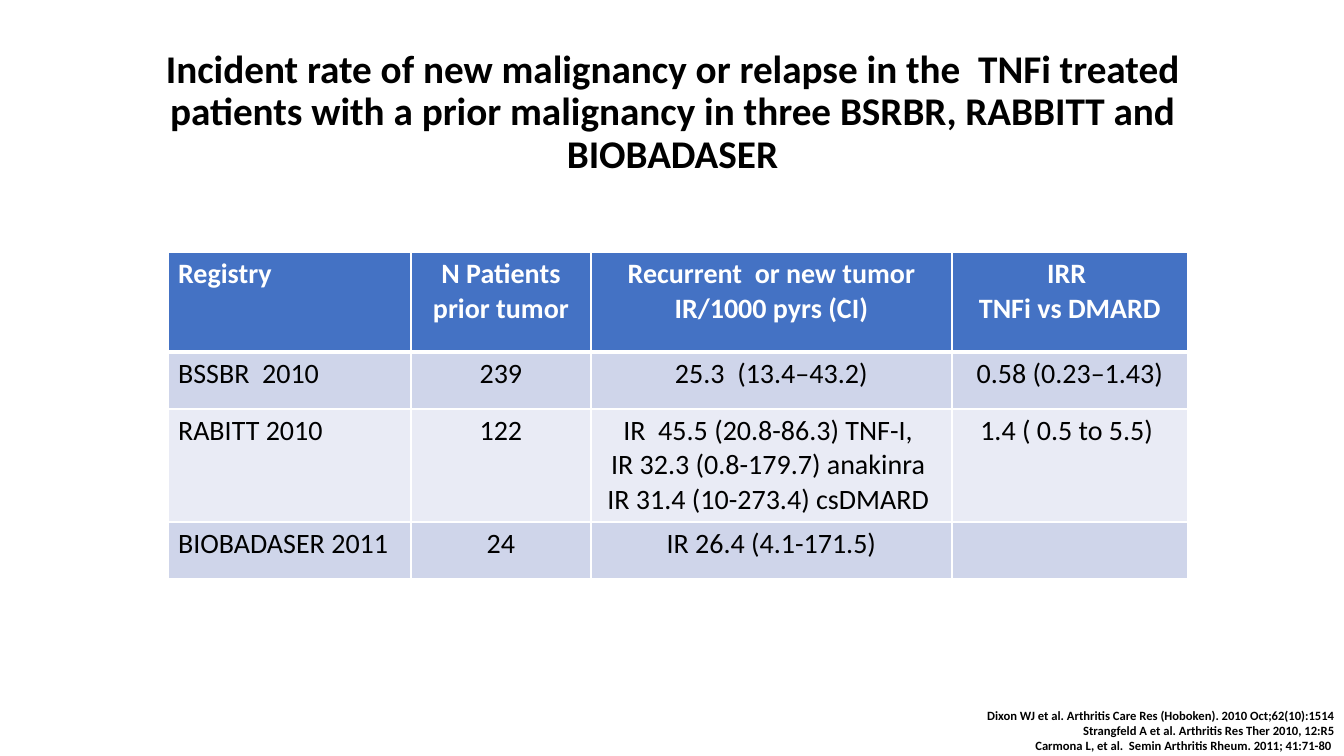
from lxml import etree
from pptx import Presentation
from pptx.dml.color import RGBColor
from pptx.enum.text import MSO_ANCHOR, MSO_AUTO_SIZE, PP_ALIGN
from pptx.oxml.ns import qn
from pptx.util import Emu, Pt

HEADLINE = ("Incident rate of new malignancy or relapse in the  TNFi treated patients "
            "with a prior malignancy in three BSRBR, RABBITT and BIOBADASER")
REGISTRY_ROWS = [
    ["Registry", "N Patients prior tumor",
     "Recurrent  or new tumor\nIR/1000 pyrs (CI)", "IRR \nTNFi vs DMARD"],
    ["BSSBR  2010", "239", "25.3  (13.4–43.2)", "0.58 (0.23–1.43)"],
    ["RABITT 2010", "122",
     "IR  45.5 (20.8-86.3) TNF-I, \nIR 32.3 (0.8-179.7) anakinra \nIR 31.4 (10-273.4) csDMARD ",
     "1.4 ( 0.5 to 5.5) "],
    ["BIOBADASER 2011", "24", "IR 26.4 (4.1-171.5)", ""],
]
REFERENCES = [
    "Dixon WJ et al. Arthritis Care Res (Hoboken). 2010 Oct;62(10):1514",
    "Strangfeld A et al. Arthritis Res Ther 2010, 12:R5",
    "Carmona L, et al.  Semin Arthritis Rheum. 2011; 41:71-80 ",
]

BLACK = RGBColor(0x00, 0x00, 0x00)
WHITE = RGBColor(0xFF, 0xFF, 0xFF)
HEADER_BLUE = RGBColor(0x44, 0x72, 0xC4)
BANDS = [RGBColor(0xE9, 0xEB, 0xF5), RGBColor(0xCF, 0xD5, 0xEA)]

HEADLINE_BOX = (93, 40, 1159, 146)
REFERENCES_BOX = (502, 703, 842, 56)
TABLE_CORNER = (168, 252)
COLUMN_WIDTHS = [243, 180, 361, 236]
ROW_HEIGHTS = [100, 57, 106, 57]

HEADLINE_FONT = {"name": "Calibri", "size": Pt(28), "bold": True}
HEADER_FONT = {"name": "Calibri", "size": Pt(20), "bold": True}
BODY_FONT = {"name": "Calibri", "size": Pt(20), "bold": False}
REFERENCE_FONT = {"name": "Calibri", "size": Pt(9), "bold": True}


def px(length):
    return Emu(round(length * 914400 / 100.8))


def write(frame, text, font_values, color, align):
    frame.text = text
    for paragraph in frame.paragraphs:
        paragraph.alignment = align
        for font in [paragraph.font] + [run.font for run in paragraph.runs]:
            for key, value in font_values.items():
                setattr(font, key, value)
            font.color.rgb = color


def add_border(cell, side, points):
    line = etree.SubElement(cell._tc.get_or_add_tcPr(), qn(f"a:ln{side}"), w=str(Pt(points)))
    fill = etree.SubElement(line, qn("a:solidFill"))
    etree.SubElement(fill, qn("a:srgbClr"), val=str(WHITE))


def build_headline(slide):
    headline = slide.shapes.title
    headline.left, headline.top, headline.width, headline.height = map(px, HEADLINE_BOX)
    frame = headline.text_frame
    write(frame, HEADLINE, HEADLINE_FONT, BLACK, PP_ALIGN.CENTER)
    frame.vertical_anchor = MSO_ANCHOR.MIDDLE
    frame.auto_size = MSO_AUTO_SIZE.NONE
    frame.paragraphs[0].line_spacing = 0.9


def build_registry_table(slide):
    place = map(px, (*TABLE_CORNER, sum(COLUMN_WIDTHS), sum(ROW_HEIGHTS)))
    table = slide.shapes.add_table(len(ROW_HEIGHTS), len(COLUMN_WIDTHS), *place).table
    for column, width in zip(table.columns, COLUMN_WIDTHS):
        column.width = px(width)
    for row, height in zip(table.rows, ROW_HEIGHTS):
        row.height = px(height)
    for r, values in enumerate(REGISTRY_ROWS):
        header = r == 0
        for c, value in enumerate(values):
            cell = table.cell(r, c)
            write(cell.text_frame, value, HEADER_FONT if header else BODY_FONT,
                  WHITE if header else BLACK, PP_ALIGN.CENTER if c else PP_ALIGN.LEFT)
            borders = {"L": 1, "R": 1, "T": 3 if r == 1 else 1, "B": 3 if header else 1}
            for side, points in borders.items():
                add_border(cell, side, points)
            cell.fill.solid()
            cell.fill.fore_color.rgb = HEADER_BLUE if header else BANDS[r % 2]


def build_references(slide):
    frame = slide.shapes.add_textbox(*map(px, REFERENCES_BOX)).text_frame
    frame.word_wrap = True
    frame.auto_size = MSO_AUTO_SIZE.SHAPE_TO_FIT_TEXT
    write(frame, "\n".join(REFERENCES), REFERENCE_FONT, BLACK, PP_ALIGN.RIGHT)


def main():
    deck = Presentation()
    deck.slide_width, deck.slide_height = px(1344), px(756)
    slide = deck.slides.add_slide(deck.slide_layouts[5])
    build_headline(slide)
    build_registry_table(slide)
    build_references(slide)
    deck.save("out.pptx")


if __name__ == "__main__":
    main()
